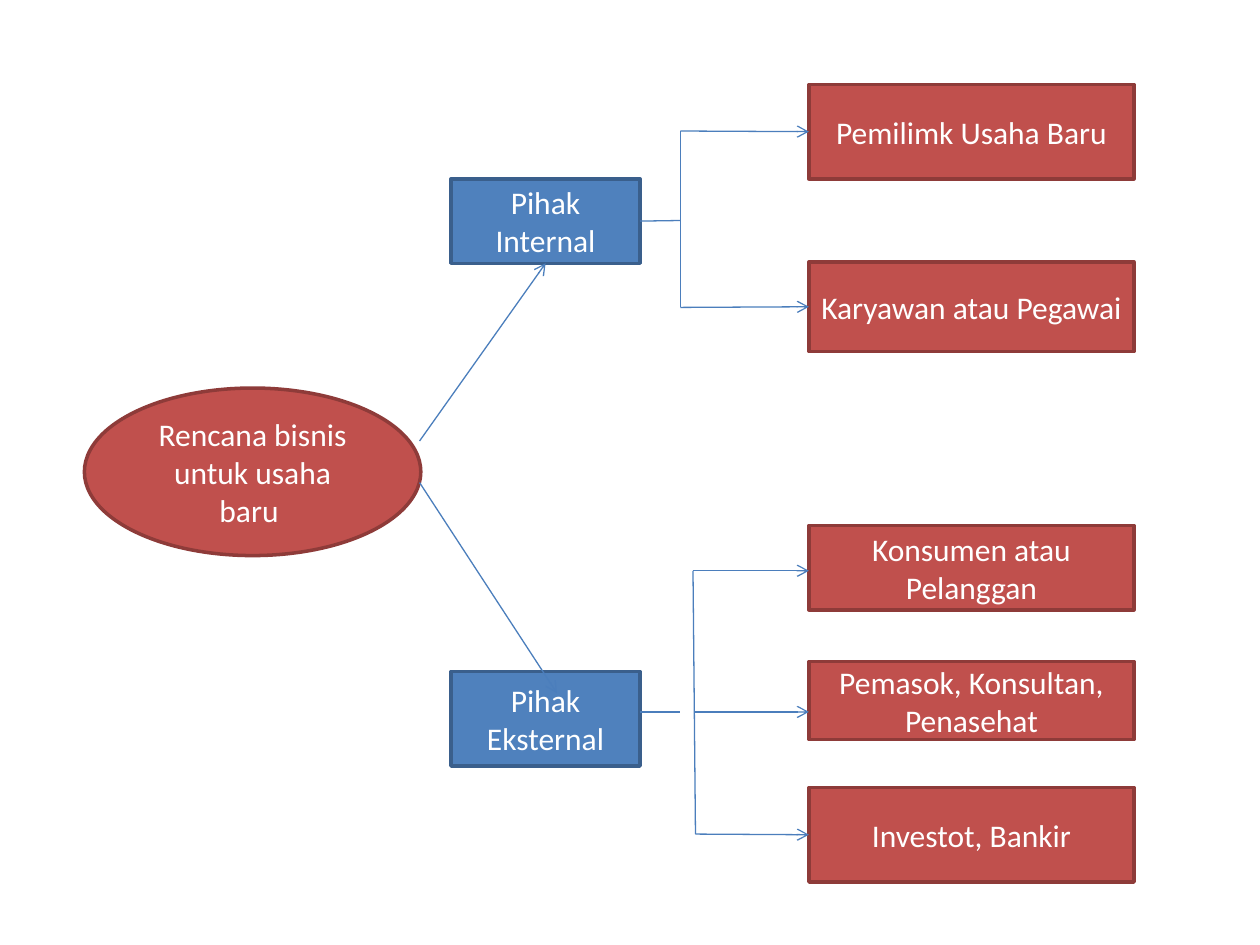
"""Build a tree slide of the internal and external parties to a new business plan."""
import pptx
import pptx.util
import pptx.dml.color
import pptx.enum.shapes
import pptx.enum.text
import pptx.oxml
import pptx.oxml.ns

Inches = pptx.util.Inches
Pt = pptx.util.Pt
RGBColor = pptx.dml.color.RGBColor
SHAPE = pptx.enum.shapes.MSO_SHAPE

RED = RGBColor(0xC0, 0x50, 0x4D)
DARK_RED = RGBColor(0x8E, 0x3B, 0x39)
BLUE = RGBColor(0x4F, 0x81, 0xBD)
DARK_BLUE = RGBColor(0x3A, 0x5F, 0x8C)
LINE_BLUE = RGBColor(0x4B, 0x7E, 0xBC)
WHITE = RGBColor(0xFF, 0xFF, 0xFF)
BOTTOM, LEFT, RIGHT = 2, 1, 3


def add_node(s, kind, text, box, fill, line):
    sp = s.shapes.add_shape(kind, *[Inches(v) for v in box])
    sp.shadow.inherit = False
    sp.fill.solid()
    sp.fill.fore_color.rgb = fill
    sp.line.color.rgb = line
    sp.line.width = Pt(2)
    tf = sp.text_frame
    tf.word_wrap = True
    tf.vertical_anchor = pptx.enum.text.MSO_ANCHOR.MIDDLE
    p = tf.paragraphs[0]
    p.alignment = pptx.enum.text.PP_ALIGN.CENTER
    r = p.add_run()
    r.text = text
    r.font.name = "Calibri"
    r.font.size = Pt(18)
    r.font.color.rgb = WHITE
    return sp


def add_line(s, start, end, arrow=False):
    cx = s.shapes.add_connector(
        pptx.enum.shapes.MSO_CONNECTOR.STRAIGHT, *[Inches(v) for v in start + end])
    cx.line.color.rgb = LINE_BLUE
    cx.line.width = Pt(0.75)
    if arrow:
        tail = pptx.oxml.parse_xml(
            f'<a:tailEnd {pptx.oxml.ns.nsdecls("a")} type="arrow"/>')
        cx.line._get_or_add_ln().append(tail)
    cx._element.spPr.append(
        pptx.oxml.parse_xml(f'<a:effectLst {pptx.oxml.ns.nsdecls("a")}/>'))
    return cx


prs = pptx.Presentation()
prs.slide_width = Inches(10)
prs.slide_height = Inches(7.5)
s = prs.slides.add_slide(prs.slide_layouts[6])

add_node(s, SHAPE.OVAL, "Rencana bisnis untuk usaha baru ",
         (0.67, 3.08, 2.67, 1.33), RED, DARK_RED)
internal = add_node(s, SHAPE.RECTANGLE, "Pihak Internal",
                    (3.58, 1.42, 1.5, 0.67), BLUE, DARK_BLUE)
add_node(s, SHAPE.RECTANGLE, "Pihak Eksternal",
         (3.58, 5.33, 1.5, 0.75), BLUE, DARK_BLUE)

add_line(s, (3.33, 3.5), (4.33, 2.08), arrow=True).end_connect(internal, BOTTOM)
add_line(s, (3.33, 3.83), (4.42, 5.5), arrow=True)
add_line(s, (5.08, 1.75), (5.4, 1.75)).begin_connect(internal, RIGHT)
add_line(s, (5.08, 5.65), (5.4, 5.65))
add_line(s, (5.4, 1.04), (5.4, 2.44))
add_line(s, (5.5, 4.53), (5.52, 6.62))

parties = [
    ("Pemilimk Usaha Baru", 0.67, 0.75, 5.4, 1.04, True),
    ("Karyawan atau Pegawai", 2.08, 0.71, 5.4, 2.44, True),
    ("Konsumen atau Pelanggan", 4.17, 0.67, 5.5, 4.53, False),
    ("Pemasok, Konsultan, Penasehat", 5.25, 0.62, 5.52, 5.65, False),
    ("Investot, Bankir", 6.25, 0.75, 5.52, 6.62, True),
]
for text, top, height, x, y, joined in parties:
    sp = add_node(s, SHAPE.RECTANGLE, text, (6.42, top, 2.58, height), RED, DARK_RED)
    cx = add_line(s, (x, y), (6.42, y), arrow=True)
    if joined:
        cx.end_connect(sp, LEFT)

prs.save("out.pptx")
